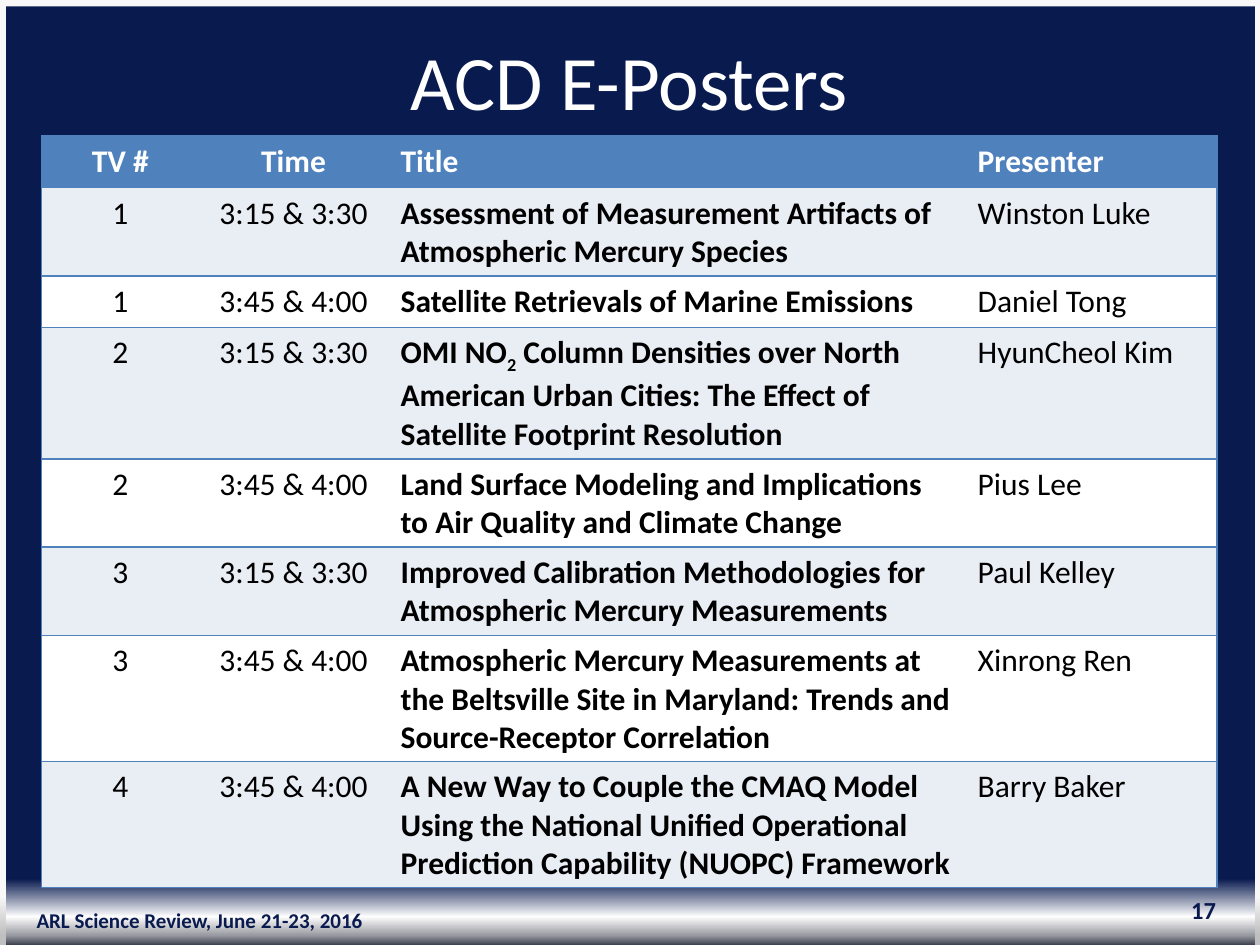
from pptx import Presentation
from pptx.dml.color import RGBColor
from pptx.enum import shapes, text
from pptx.oxml import parse_xml
from pptx.oxml.ns import nsdecls
from pptx.util import Inches, Pt

FONT = "Calibri"
NAVY, BLUE, WHITE, BLACK, BAND = "091A4F", "4F81BD", "FFFFFF", "000000", "E9EDF4"
FRAME = "F8F8F8"
BACKGROUND_STOPS = [(0, NAVY), (93, NAVY), (97, "FEFEFE"), (99, "9799A0"), (100, "3C414E")]
SIDE_STOPS = [(0, FRAME), (95, "F5F5F5"), (99, "BFBFBF")]
SIDE_LEFTS = (0, 9.96)

TITLE = "ACD E-Posters"
FOOTERS = [  # text, box, size, alignment
    ("ARL Science Review, June 21-23, 2016", (0, 7.1, 3.17, 0.4), 12, text.PP_ALIGN.CENTER),
    ("17", (7.42, 7.02, 2.33, 0.4), 14, text.PP_ALIGN.RIGHT),
]
HEADERS = ("TV #", "Time", "Title", "Presenter")
EARLY, LATE = "3:15 & 3:30", "3:45 & 4:00"
SUBSCRIPT_MARK = "_"  # text between two marks is lowered
POSTERS = [
    ("1", EARLY, "Assessment of Measurement Artifacts of Atmospheric Mercury Species", "Winston Luke"),
    ("1", LATE, "Satellite Retrievals of Marine Emissions", "Daniel Tong"),
    ("2", EARLY, "OMI NO_2_ Column Densities over North American Urban Cities: "
                 "The Effect of Satellite Footprint Resolution", "HyunCheol Kim"),
    ("2", LATE, "Land Surface Modeling and Implications to Air Quality and Climate Change", "Pius Lee"),
    ("3", EARLY, "Improved Calibration Methodologies for Atmospheric Mercury Measurements", "Paul Kelley"),
    ("3", LATE, "Atmospheric Mercury Measurements at the Beltsville Site in Maryland: "
                "Trends and Source-Receptor Correlation", "Xinrong Ren"),
    ("4", LATE, "A New Way to Couple the CMAQ Model Using the National Unified Operational "
                "Prediction Capability (NUOPC) Framework", "Barry Baker"),
]
COLUMN_WIDTHS = (1.25, 1.5, 4.58, 2)
CENTERED_COLUMNS = (0, 1)
TITLE_COLUMN = HEADERS.index("Title")
ROW_HEIGHT = 0.41


def rgb(color):
    return RGBColor.from_string(color)


def box(left, top, width, height):
    return Inches(left), Inches(top), Inches(width), Inches(height)


def style(paragraph, size, color, bold=False, align=text.PP_ALIGN.LEFT):
    paragraph.alignment = align
    font = paragraph.font
    font.name, font.size, font.bold = FONT, Pt(size), bold
    font.color.rgb = rgb(color)


def fill_down(fill, stops):
    """Fill with a top-to-bottom gradient of (percent, colour) stops."""
    fill.gradient()
    fill.gradient_angle = 270
    stop_list = fill._fill._gradFill.gsLst
    for old in list(stop_list):
        stop_list.remove(old)
    for percent, color in stops:
        stop_list.append(parse_xml(
            f'<a:gs {nsdecls("a")} pos="{percent * 1000}"><a:srgbClr val="{color}"/></a:gs>'))


def add_bar(slide, *bounds):
    bar = slide.shapes.add_shape(shapes.MSO_SHAPE.RECTANGLE, *box(*bounds))
    bar.shadow.inherit = False
    bar.line.fill.background()
    return bar


def set_borders(cell, visible_sides):
    for side in "LRTB":
        paint = (f'<a:solidFill><a:srgbClr val="{BLUE}"/></a:solidFill>'
                 if side in visible_sides else "<a:noFill/>")
        cell._tc.get_or_add_tcPr().append(parse_xml(
            f'<a:ln{side} {nsdecls("a")} w="12700">{paint}</a:ln{side}>'))


def add_poster_table(slide):
    rows = [HEADERS] + POSTERS
    frame = slide.shapes.add_table(
        len(rows), len(HEADERS), *box(0.33, 1.08, 9.33, ROW_HEIGHT * len(rows)))
    table = frame.table
    for column, width in zip(table.columns, COLUMN_WIDTHS):
        column.width = Inches(width)
    for r, row in enumerate(rows):
        table.rows[r].height = Inches(ROW_HEIGHT)
        header = r == 0
        fill_color = BLUE if header else BAND if r % 2 else WHITE
        for c, content in enumerate(row):
            cell = table.cell(r, c)
            outer = "L" if c == 0 else "R" if c == len(row) - 1 else ""
            set_borders(cell, "TB" + outer)
            cell.fill.solid()
            cell.fill.fore_color.rgb = rgb(fill_color)
            paragraph = cell.text_frame.paragraphs[0]
            align = text.PP_ALIGN.CENTER if c in CENTERED_COLUMNS else text.PP_ALIGN.LEFT
            bold = header or c == TITLE_COLUMN
            style(paragraph, 18, WHITE if header else BLACK, bold, align)
            for i, part in enumerate(content.split(SUBSCRIPT_MARK)):
                run = paragraph.add_run()
                run.text = part
                if i % 2:
                    run._r.get_or_add_rPr().set("baseline", "-25000")
    frame.height = Inches(5.91)


def main():
    deck = Presentation()
    deck.slide_width, deck.slide_height = Inches(10), Inches(7.5)
    slide = deck.slides.add_slide(deck.slide_layouts[5])
    fill_down(slide.background.fill, BACKGROUND_STOPS)

    for left in SIDE_LEFTS:
        fill_down(add_bar(slide, left, 0, 0.05, 7.5).fill, SIDE_STOPS)
    top_bar = add_bar(slide, 0.02, 0, 9.98, 0.05)
    top_bar.fill.solid()
    top_bar.fill.fore_color.rgb = rgb(FRAME)

    for words, bounds, size, align in FOOTERS:
        footer = slide.shapes.add_textbox(*box(*bounds)).text_frame
        footer.word_wrap = True
        footer.vertical_anchor = text.MSO_ANCHOR.MIDDLE
        footer.text = words
        style(footer.paragraphs[0], size, NAVY, True, align)

    add_poster_table(slide)

    title = slide.shapes.title
    title.left, title.top, title.width, title.height = box(0.33, 0.17, 9.33, 0.92)
    title.text_frame.text = TITLE
    title.text_frame.vertical_anchor = text.MSO_ANCHOR.MIDDLE
    style(title.text_frame.paragraphs[0], 44, WHITE, align=text.PP_ALIGN.CENTER)
    deck.save("out.pptx")


if __name__ == "__main__":
    main()
